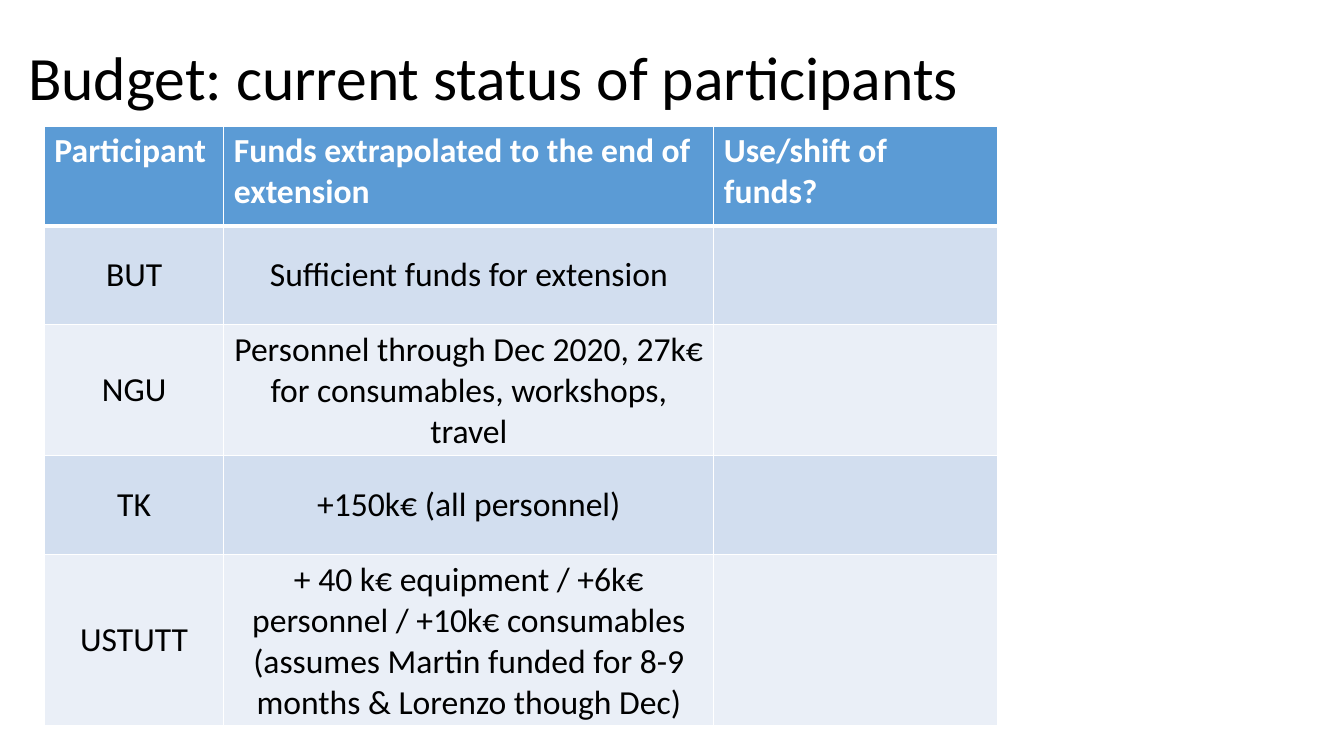
from lxml import etree
from pptx import Presentation
from pptx.dml.color import RGBColor
from pptx.enum.text import MSO_ANCHOR, PP_ALIGN
from pptx.oxml.ns import qn
from pptx.util import Inches, Pt

MIDDLE, TOP = MSO_ANCHOR.MIDDLE, MSO_ANCHOR.TOP
CENTER, LEFT = PP_ALIGN.CENTER, PP_ALIGN.LEFT

FONT = "Calibri"
COLORS = {
    "text": "000000",
    "header_text": "FFFFFF",
    "header": "5B9BD5",
    "odd_row": "D2DEEF",
    "even_row": "EAEFF7",
    "border": "FFFFFF",
}
COLUMN_WIDTHS = [1.78, 4.86, 2.81]
ROW_HEIGHTS = [0.99] + [0.98] * 4
BUDGET = [
    ["Participant", "Funds extrapolated to the end of extension", "Use/shift of funds?"],
    ["BUT", "Sufficient funds for extension", ""],
    ["NGU", "Personnel through Dec 2020, 27k€ for consumables, workshops, travel", ""],
    ["TK", "+150k€ (all personnel)", ""],
    ["USTUTT", "+ 40 k€ equipment / +6k€ personnel / +10k€ consumables "
     "(assumes Martin funded for 8-9 months & Lorenzo though Dec)", ""],
]


def color(name):
    return RGBColor.from_string(COLORS[name])


def format_text(paragraph, size, color_name, bold=False):
    for run in paragraph.runs:
        run.font.name = FONT
        run.font.size = Pt(size)
        run.font.bold = bold
        run.font.color.rgb = color(color_name)


def add_title(slide, text):
    title = slide.shapes.add_textbox(Inches(0.18), Inches(0.07), Inches(11.5), Inches(1.45))
    frame = title.text_frame
    frame.word_wrap = True
    frame.vertical_anchor = MIDDLE
    frame.text = text
    frame.paragraphs[0].line_spacing = 0.9
    format_text(frame.paragraphs[0], 44, "text")


def set_borders(cell, widths):
    """Draw the borders; widths maps each side (L, R, T, B) to points."""
    properties = cell._tc.get_or_add_tcPr()
    for position, (side, width) in enumerate(widths.items()):
        line = etree.Element(qn(f"a:ln{side}"), w=str(Pt(width)))
        fill = etree.SubElement(line, qn("a:solidFill"))
        etree.SubElement(fill, qn("a:srgbClr"), val=COLORS["border"])
        properties.insert(position, line)


def fill_cell(cell, text, row):
    is_header = row == 0
    cell.text = text
    cell.vertical_anchor = TOP if is_header else MIDDLE
    paragraph = cell.text_frame.paragraphs[0]
    paragraph.alignment = LEFT if is_header else CENTER
    format_text(paragraph, 24, "header_text" if is_header else "text", is_header)

    band = "header" if is_header else "odd_row" if row % 2 else "even_row"
    cell.fill.solid()
    cell.fill.fore_color.rgb = color(band)
    # The rule under the header is heavier than the others
    set_borders(cell, {"L": 1, "R": 1, "T": 3 if row == 1 else 1, "B": 3 if is_header else 1})


def add_budget_table(slide):
    budget = slide.shapes.add_table(
        len(BUDGET), len(COLUMN_WIDTHS), Inches(0.44), Inches(1.25),
        Inches(sum(COLUMN_WIDTHS)), Inches(sum(ROW_HEIGHTS))).table
    for column, width in zip(budget.columns, COLUMN_WIDTHS):
        column.width = Inches(width)
    for row, height in zip(budget.rows, ROW_HEIGHTS):
        row.height = Inches(height)
    for row, texts in enumerate(BUDGET):
        for column, text in enumerate(texts):
            fill_cell(budget.cell(row, column), text, row)


def main():
    presentation = Presentation()
    presentation.slide_width = Inches(13.33)
    presentation.slide_height = Inches(7.5)
    slide = presentation.slides.add_slide(presentation.slide_layouts[6])

    add_title(slide, "Budget: current status of participants")
    add_budget_table(slide)

    presentation.save("out.pptx")


if __name__ == "__main__":
    main()
